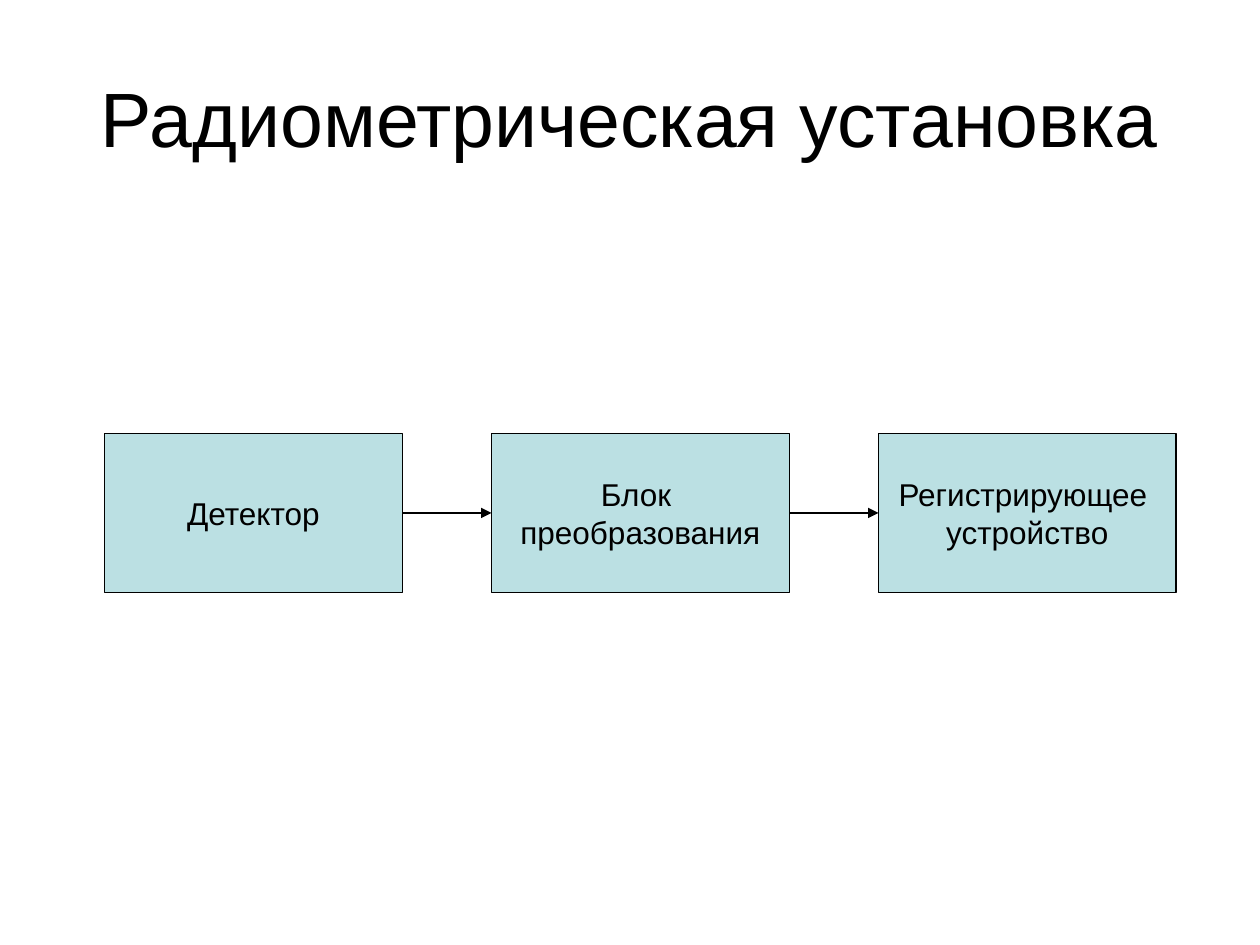
import pptx
import pptx.util
import pptx.dml.color
import pptx.enum.shapes
import pptx.enum.text
import pptx.oxml.ns
import lxml.etree

Cm = pptx.util.Cm
Pt = pptx.util.Pt
qn = pptx.oxml.ns.qn
kinds = pptx.enum.shapes


def tint(fmt, code):
    fmt.rgb = pptx.dml.color.RGBColor.from_string(code)


def write(frame, lines, size):
    frame.vertical_anchor = pptx.enum.text.MSO_ANCHOR.MIDDLE
    for i, line in enumerate(lines):
        para = frame.add_paragraph() if i else frame.paragraphs[0]
        para.alignment = pptx.enum.text.PP_ALIGN.CENTER
        run = para.add_run()
        run.text = line
        run.font.size = Pt(size)
        run.font.name = "Arial"
        tint(run.font.fill.fore_color if run.font.fill.solid() else run.font.color, "000000")


deck = pptx.Presentation()
deck.slide_width = Cm(25.4)
deck.slide_height = Cm(19.05)
slide = deck.slides.add_slide(deck.slide_layouts[5])

title = slide.shapes.title
title.left, title.top = Cm(1.27), Cm(0.76)
title.width, title.height = Cm(22.86), Cm(3.18)
write(title.text_frame, ["Радиометрическая установка"], 44)

left, top, wide, high, step = 2.11, 8.74, 6, 3.2, 7.8
steps = [
    ["Детектор"],
    ["Блок ", "преобразования"],
    ["Регистрирующее ", "устройство"],
]
boxes = []
for i, lines in enumerate(steps):
    box = slide.shapes.add_shape(
        kinds.MSO_SHAPE.FLOWCHART_PROCESS,
        Cm(left + i * step), Cm(top), Cm(wide), Cm(high))
    box.shadow.inherit = False
    box.fill.solid()
    tint(box.fill.fore_color, "BBE0E3")
    tint(box.line.color, "000000")
    box.line.width = Pt(0.75)
    box.text_frame.word_wrap = False
    write(box.text_frame, lines, 18)
    boxes.append(box)

for start, end in zip(boxes, boxes[1:]):
    link = slide.shapes.add_connector(kinds.MSO_CONNECTOR.STRAIGHT, 0, 0, 0, 0)
    link.begin_connect(start, 3)
    link.end_connect(end, 1)
    tint(link.line.color, "000000")
    link.line.width = Pt(0.75)
    lxml.etree.SubElement(link.line.fill and link.line._get_or_add_ln(), qn("a:tailEnd"), type="triangle")
    lxml.etree.SubElement(link._element.spPr, qn("a:effectLst"))

deck.save("out.pptx")
